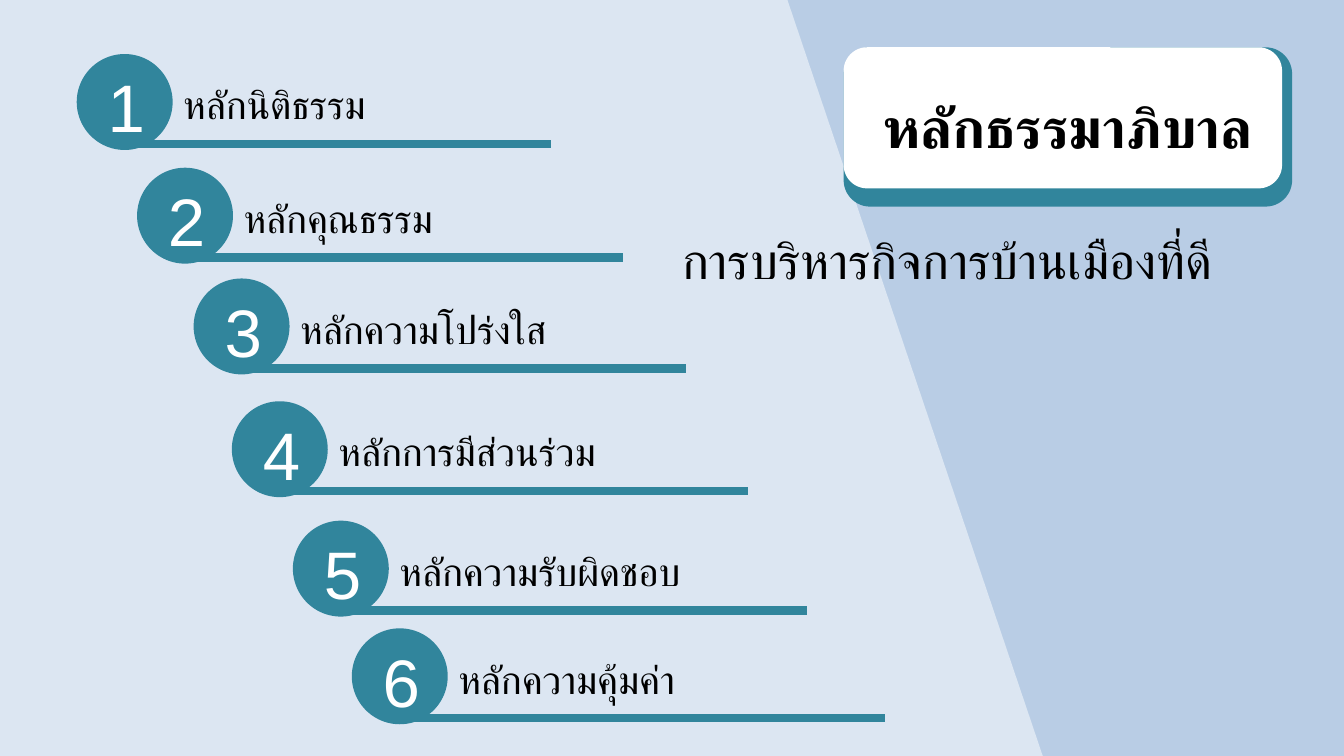
from lxml import etree
from pptx import Presentation
from pptx.dml.color import RGBColor
from pptx.enum import shapes, text
from pptx.oxml import ns
from pptx.util import Pt

BACK = RGBColor(0xB9, 0xCD, 0xE5)
PALE = RGBColor(0xDC, 0xE6, 0xF2)
TEAL = RGBColor(0x31, 0x85, 0x9C)
WHITE = RGBColor(0xFF, 0xFF, 0xFF)
BLACK = RGBColor(0, 0, 0)
KIND = shapes.MSO_SHAPE
DISC = 68.5

# Each principle: disc left, disc top, right end of its rule, wording
ITEMS = [
    (54.8, 38.6, 393.8, "หลักนิติธรรม"),
    (97.9, 119.8, 445, "หลักคุณธรรม"),
    (138.3, 198.9, 490.3, "หลักความโปร่งใส"),
    (165.6, 286.6, 534.3, "หลักการมีส่วนร่วม"),
    (209.2, 371.9, 576.7, "หลักความรับผิดชอบ"),
    (251.3, 448.8, 632.2, "หลักความคุ้มค่า"),
]


class Deck:
    font = "Arial"

    def __init__(self, slide):
        self.slide = slide
        self.shapes = slide.shapes

    def shape(self, kind, x, y, w, h, color):
        item = self.shapes.add_shape(kind, Pt(x), Pt(y), Pt(w), Pt(h))
        item.shadow.inherit = False
        item.fill.solid()
        item.fill.fore_color.rgb = color
        item.line.fill.background()
        return item

    def style(self, frame, words, size, color, bold=False):
        frame.word_wrap = True
        frame.vertical_anchor = text.MSO_ANCHOR.TOP
        para = frame.paragraphs[0]
        para.text = words
        font = para.font
        font.name, font.size, font.bold = self.font, Pt(size), bold
        font.color.rgb = color
        return para

    def label(self, x, y, w, h, words, size, color=BLACK):
        box = self.shapes.add_textbox(Pt(x), Pt(y), Pt(w), Pt(h))
        self.style(box.text_frame, words, size, color)

    def rule(self, x, y, end):
        line = self.shapes.add_connector(
            shapes.MSO_CONNECTOR.STRAIGHT, Pt(x), Pt(y), Pt(end), Pt(y))
        line.line.color.rgb = TEAL
        line.line.width = Pt(6)
        etree.SubElement(line.element.spPr, ns.qn("a:effectLst"))

    def title(self, x, y, w, h, words, size):
        """Fill the title placeholder and bring it to the front."""
        box = self.shapes.title
        box.left, box.top, box.width, box.height = Pt(x), Pt(y), Pt(w), Pt(h)
        para = self.style(box.text_frame, words, size, BLACK, True)
        para.alignment = text.PP_ALIGN.CENTER
        box.element.getparent().append(box.element)

    def item(self, num, x, y, end, words):
        self.shape(KIND.OVAL, x, y, DISC, DISC, TEAL)
        self.label(x + 15, y + 4.8, 57, 65.5, str(num), 48, WHITE)
        self.label(x + 69, y + 15.4, 582.5, 41, words, 28)
        self.rule(x + 40.2, y + 64.2, end)


def main():
    prs = Presentation()
    prs.slide_width, prs.slide_height = Pt(960), Pt(540)
    slide = prs.slides.add_slide(prs.slide_layouts[5])
    fill = slide.background.fill
    fill.solid()
    fill.fore_color.rgb = BACK

    deck = Deck(slide)
    panel = deck.shape(KIND.FLOWCHART_DATA, -270.7, -59, 1016.6, 602, PALE)
    panel.element.spPr.xfrm.set("flipH", "1")
    for num, row in enumerate(ITEMS, 1):
        deck.item(num, *row)

    deck.shape(KIND.ROUNDED_RECTANGLE, 602.6, 33.8, 320.4, 113.8, TEAL)
    deck.shape(KIND.ROUNDED_RECTANGLE, 602.6, 33.8, 313.2, 100.8, WHITE)
    deck.title(589, 62.6, 347.8, 55.4, "หลักธรรมาภิบาล", 40)
    deck.label(480.2, 159.8, 479.5, 51, "การบริหารกิจการบ้านเมืองที่ดี", 36)
    prs.save("out.pptx")


if __name__ == "__main__":
    main()
